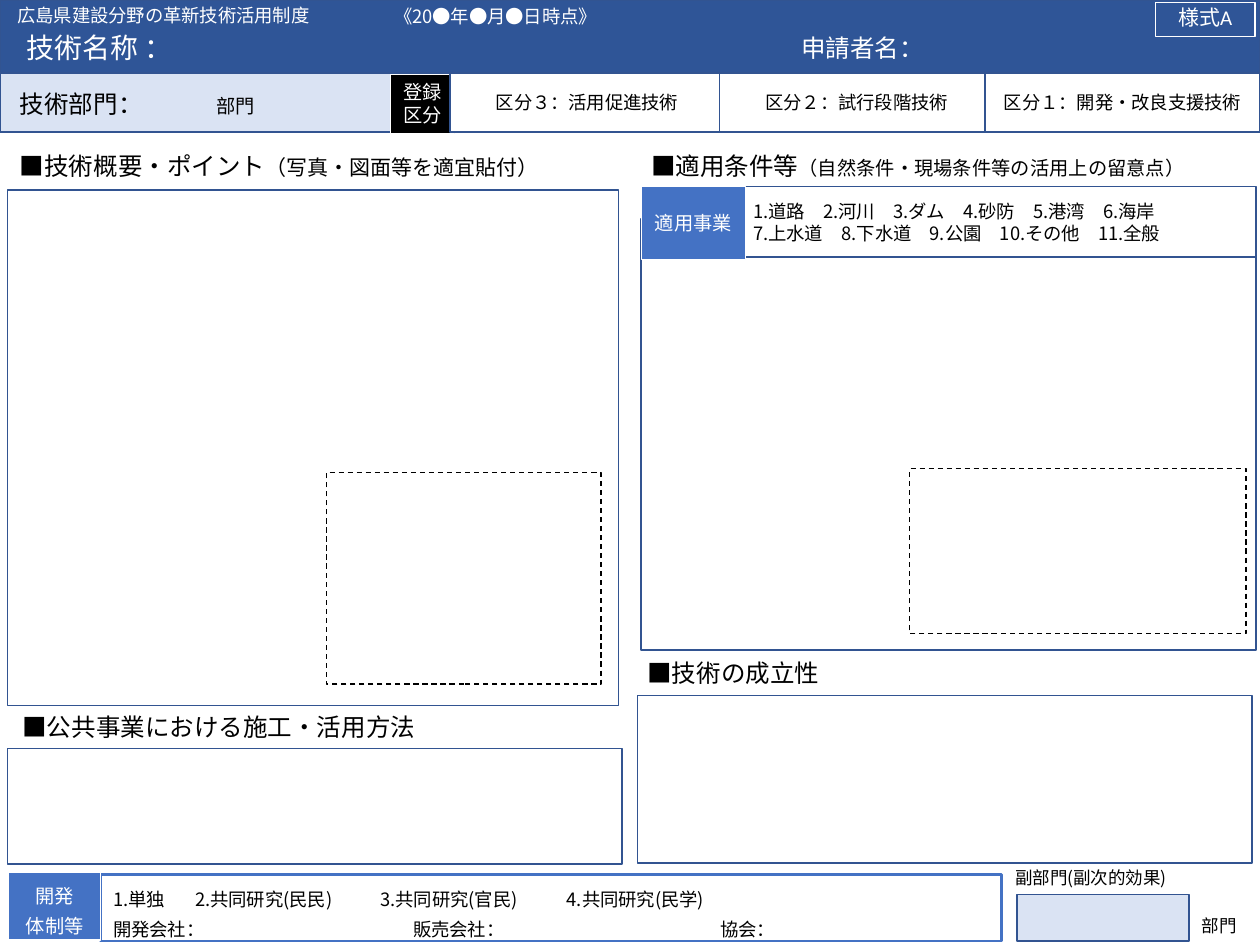
import lxml.etree
import pptx
import pptx.dml.color
import pptx.enum.dml
import pptx.enum.shapes
import pptx.enum.text
import pptx.oxml.ns
import pptx.util

RGB = pptx.dml.color.RGBColor
NAVY = RGB(0x2F, 0x55, 0x97)
EDGE = RGB(0x32, 0x54, 0x91)
BLUE = RGB(0x44, 0x72, 0xC4)
PALE = RGB(0xDA, 0xE3, 0xF3)
WHITE = RGB(0xFF, 0xFF, 0xFF)
BLACK = RGB(0x00, 0x00, 0x00)

FONT = "Noto Sans CJK JP"
COLS, ROWS = 100, 75
CELL = pptx.util.Inches(0.1)
ALIGN = pptx.enum.text.PP_ALIGN
MIDDLE = pptx.enum.text.MSO_ANCHOR.MIDDLE
TOP = pptx.enum.text.MSO_ANCHOR.TOP
DASH = pptx.enum.dml.MSO_LINE.DASH


def grid(*vals):
    """Turn grid columns and rows into lengths."""
    return [round(val * CELL) for val in vals]


def apply(item, vals):
    """Set each attribute named in a dict."""
    for key, val in vals.items():
        setattr(item, key, val)


def node(base, tag, **attrs):
    """Append a drawing element to a base element."""
    return lxml.etree.SubElement(base, pptx.oxml.ns.qn(tag), attrs)


def write(frame, lines, color=BLACK, size=10.5, anchor=TOP, align=ALIGN.LEFT,
          lead=None, tabs=(), face=FONT):
    """Fill a frame with lines, each a string or a list of (text, size) runs."""
    apply(frame, {"word_wrap": True, "vertical_anchor": anchor,
                  "auto_size": pptx.enum.text.MSO_AUTO_SIZE.NONE})
    for num, line in enumerate(lines):
        para = frame.add_paragraph() if num else frame.paragraphs[0]
        apply(para, {"alignment": align,
                     "line_spacing": pptx.util.Pt(lead) if lead else 1.0})
        stops = tabs[num] if tabs else ()
        if stops:
            group = node(para._p.get_or_add_pPr(), "a:tabLst")
            for pos in grid(*stops):
                node(group, "a:tab", pos=str(pos), algn="l")
        for words, points in [(line, size)] if isinstance(line, str) else line:
            run = para.add_run()
            run.text = words
            apply(run.font, {"name": face, "size": pptx.util.Pt(points)})
            run.font.color.rgb = color
            node(run.font._element, "a:ea", typeface=FONT)


def box(slide, place, fill=WHITE, edge=EDGE, width=1, dash=None, lines=(), **form):
    """Draw a framed rectangle, with text if lines are given."""
    shape = slide.shapes.add_shape(pptx.enum.shapes.MSO_SHAPE.RECTANGLE, *grid(*place))
    shape.shadow.inherit = False
    if fill is None:
        shape.fill.background()
    else:
        shape.fill.solid()
        shape.fill.fore_color.rgb = fill
    shape.line.color.rgb = edge
    apply(shape.line, {"width": pptx.util.Pt(width), "dash_style": dash})
    if lines:
        write(shape.text_frame, lines, **form)


def label(slide, place, line, **form):
    """Place a line of free text."""
    write(slide.shapes.add_textbox(*grid(*place)).text_frame, [line], **form)


def title(slide, place, line, **form):
    """Move the title placeholder to the front and fill it."""
    shape = slide.shapes.title
    apply(shape, dict(zip(("left", "top", "width", "height"), grid(*place))))
    shape.element.getparent().append(shape.element)
    write(shape.text_frame, [line], **form)


def panels(slide):
    """Draw the empty entry frames and their headings."""
    for place in ((0.6, 59.4, 48.8, 9.2), (0.6, 15.1, 48.5, 40.9),
                  (50.9, 17.4, 48.8, 34.2), (50.6, 55.2, 48.8, 13.3)):
        box(slide, place)
    for place in ((72.2, 37.2, 26.7, 13.1), (25.9, 37.5, 21.8, 16.8)):
        box(slide, place, fill=None, edge=BLACK, width=0.75, dash=DASH)
    for left, top, head, note, size in (
            (0.6, 11.5, "■技術概要・ポイント", "（写真・図面等を適宜貼付）", 12),
            (50.7, 11.5, "■適用条件等", "（自然条件・現場条件等の活用上の留意点）", 11),
            (0.8, 56, "■公共事業における施工・活用方法", "", 11),
            (50.4, 51.7, "■技術の成立性", "", 11)):
        runs = [(head, 14)] + ([(note, size)] if note else [])
        label(slide, (left, top, 47.4, 3.4), runs)


def scope(slide):
    """Draw the list of fields of use."""
    box(slide, (58.8, 14.8, 40.9, 5.6), anchor=MIDDLE, lines=[
        "1.道路　2.河川　3.ダム　4.砂防　5.港湾　6.海岸",
        "7.上水道　8.下水道　9.公園　10.その他　11.全般"])
    box(slide, (50.9, 14.8, 8.3, 5.8), BLUE, WHITE, 0.75, lines=["適用事業"],
        color=WHITE, size=11, anchor=MIDDLE, align=ALIGN.CENTER)


def footer(slide):
    """Draw the development and side field rows."""
    box(slide, (8, 69.4, 71.5, 5.3), edge=BLUE, width=1.5, lead=17,
        tabs=((6.5, 21.2, 36), (23.8, 48.2)), lines=[
            "1.単独\t2.共同研究(民民)\t3.共同研究(官民)\t4.共同研究(民学)",
            "開発会社：\t販売会社：\t協会："])
    box(slide, (0.7, 69.2, 7.3, 5.4), BLUE, WHITE, 0.75, lines=["開発", "体制等"],
        color=WHITE, size=11, align=ALIGN.CENTER, lead=17)
    box(slide, (80.7, 71, 13.7, 3.7), PALE)
    label(slide, (79.6, 68.3, 18.9, 2.7), "副部門(副次的効果)", size=10)
    label(slide, (94.4, 72.1, 5.1, 2.7), "部門", size=10)


def header(slide):
    """Draw the title band."""
    box(slide, (0, 0, COLS, 5.8), NAVY)
    label(slide, (62.6, 2.1, 36.2, 3.4), "申請者名：", color=WHITE, size=14)
    title(slide, (1.1, 1.9, 61.5, 3.7), "技術名称 ：", color=WHITE, size=16)
    box(slide, (91.7, 0.2, 7.9, 2.7), None, WHITE, 0.75, lines=["様式A"],
        color=WHITE, size=12, align=ALIGN.CENTER, lead=12, face="Calibri")
    label(slide, (0.4, -0.2, 36.2, 2.9), "広島県建設分野の革新技術活用制度", color=WHITE)
    label(slide, (30.3, -0.1, 21.6, 2.8), "《20●年●月●日時点》", color=WHITE)


def classes(slide):
    """Draw the field and registration class row."""
    box(slide, (0, 5.8, 31, 4.7), PALE)
    label(slide, (0.6, 6.6, 30, 3.4), [("技術部門：\t", 14), ("部門", 11)],
          tabs=((15.6,),))
    box(slide, (31, 5.9, 5.1, 4.7), BLACK, WHITE, 0.75, lines=["登録", "区分"],
        color=WHITE, size=11)
    for left, name in ((35.7, "区分３：活用促進技術"), (57.1, "区分２：試行段階技術"),
                       (78.2, "区分１：開発・改良支援技術")):
        box(slide, (left, 5.8, 21.8, 4.7), lines=[name], anchor=MIDDLE,
            align=ALIGN.CENTER)


def main():
    """Build and save the form."""
    deck = pptx.Presentation()
    deck.slide_width, deck.slide_height = grid(COLS, ROWS)
    slide = deck.slides.add_slide(deck.slide_layouts[5])
    for part in (panels, scope, footer, header, classes):
        part(slide)
    deck.save("out.pptx")


if __name__ == "__main__":
    main()
